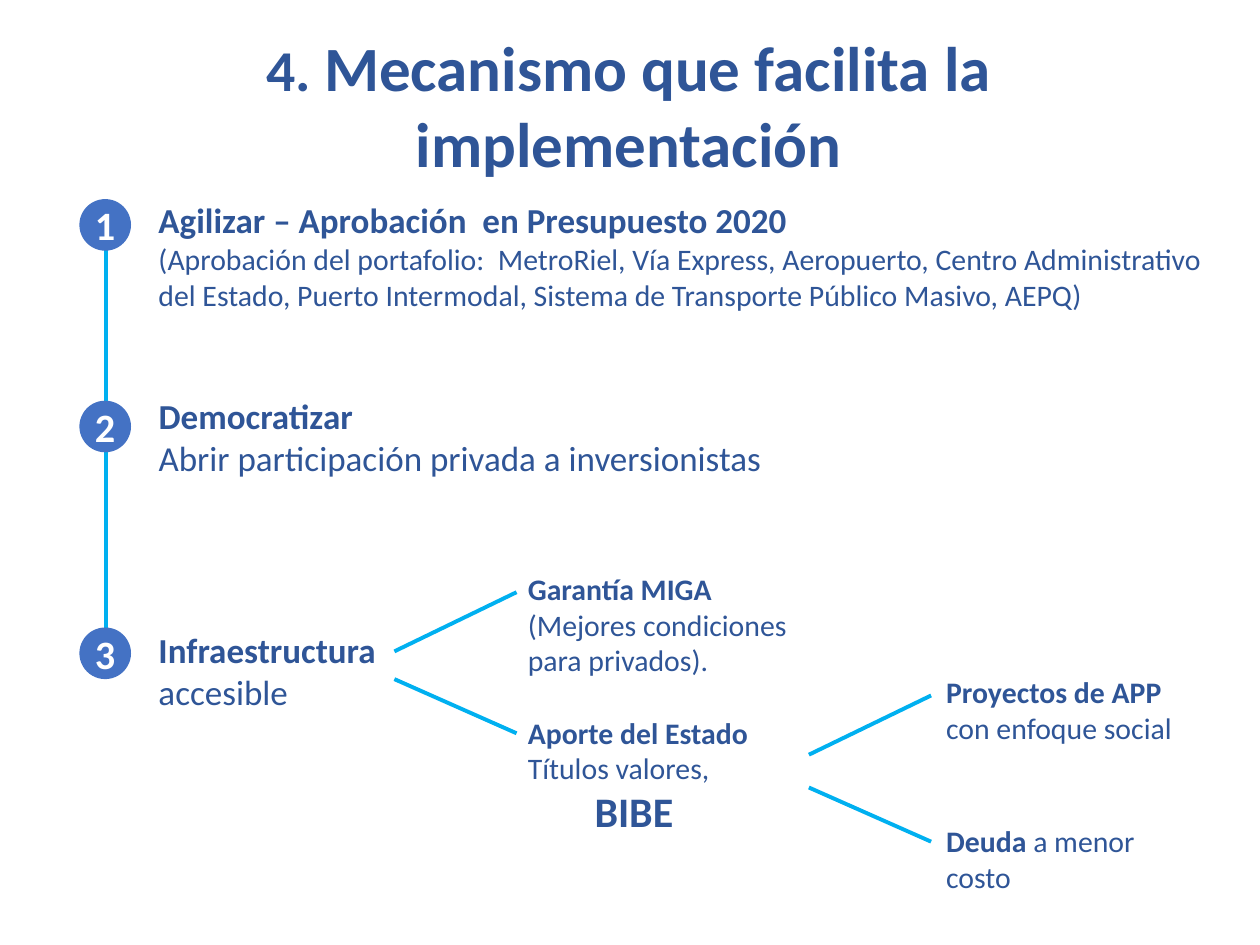
from pptx import Presentation
from pptx.dml.color import RGBColor
from pptx.enum.shapes import MSO_CONNECTOR, MSO_SHAPE
from pptx.enum.text import MSO_ANCHOR, PP_ALIGN
from pptx.oxml.ns import qn
from pptx.util import Inches, Pt
from lxml import etree

STRAIGHT = MSO_CONNECTOR.STRAIGHT
OVAL = MSO_SHAPE.OVAL
MIDDLE = MSO_ANCHOR.MIDDLE
CENTER = PP_ALIGN.CENTER
LEFT = PP_ALIGN.LEFT

COLORS = {"text": "2F5597", "badge": "4472C4", "line": "00B0F0", "number": "FFFFFF"}


def color(name):
    return RGBColor.from_string(COLORS[name])


class SlideBuilder:
    font_name = "Calibri"
    line_width = Pt(2.25)
    badge_size = 0.41

    def __init__(self, slide):
        self.slide = slide

    def span(self, para, text, size, bold, fill="text"):
        span = para.add_run()
        span.text = text
        formats = {"name": self.font_name, "size": Pt(size), "bold": bold}
        for name, value in formats.items():
            setattr(span.font, name, value)
        span.font.color.rgb = color(fill)

    def text(self, bounds, paragraphs, align=LEFT):
        box = self.slide.shapes.add_textbox(*map(Inches, bounds))
        frame = box.text_frame
        frame.word_wrap = True
        for index, spans in enumerate(paragraphs):
            para = frame.paragraphs[0] if index == 0 else frame.add_paragraph()
            para.alignment = align
            for text, size, bold in spans:
                self.span(para, text, size, bold)
        return frame

    def badge(self, left, top, label):
        size = Inches(self.badge_size)
        badge = self.slide.shapes.add_shape(OVAL, Inches(left), Inches(top), size, size)
        badge.shadow.inherit = False
        badge.fill.solid()
        badge.fill.fore_color.rgb = color("badge")
        badge.line.fill.background()
        frame = badge.text_frame
        formats = {
            "margin_left": 0, "margin_right": 0, "margin_top": 0, "margin_bottom": 0,
            "word_wrap": False, "vertical_anchor": MIDDLE,
        }
        for name, value in formats.items():
            setattr(frame, name, value)
        para = frame.paragraphs[0]
        para.alignment = CENTER
        self.span(para, label, 23, True, "number")

    def line(self, *ends):
        line = self.slide.shapes.add_connector(STRAIGHT, *map(Inches, ends))
        line.line.color.rgb = color("line")
        line.line.width = self.line_width
        etree.SubElement(line._element.spPr, qn("a:effectLst"))


def indent(para, distance):
    properties = para._p.get_or_add_pPr()
    properties.set("marL", str(Inches(distance)))
    properties.set("indent", "0")


def main():
    deck = Presentation()
    deck.slide_width = Inches(10)
    deck.slide_height = Inches(7.5)
    page = SlideBuilder(deck.slides.add_slide(deck.slide_layouts[6]))

    page.line(0.84, 1.72, 0.84, 5.17)
    page.text(
        (0.48, 0.18, 9.02, 1.87),
        [[("4. ", 33, True), ("Mecanismo que facilita la implementación", 36, True)]],
        CENTER,
    )
    for number, top in enumerate((1.58, 3.18, 4.98), start=1):
        page.badge(0.63, top, str(number))

    page.text((1.16, 1.53, 8.67, 1.01), [
        [("Agilizar – Aprobación  en Presupuesto 2020", 20, True)],
        [("(Aprobación del portafolio:  MetroRiel, Vía Express, Aeropuerto, "
          "Centro Administrativo del Estado, Puerto Intermodal, Sistema de "
          "Transporte Público Masivo, AEPQ)", 17, False)],
    ])
    page.text((1.16, 3.08, 5.01, 0.77), [
        [("Democratizar", 20, True)],
        [("Abrir participación privada a inversionistas", 20, False)],
    ])
    page.text((1.16, 4.94, 2.04, 0.77), [
        [("Infraestructura ", 20, True), ("accesible", 20, False)],
    ])
    page.text((4.09, 4.48, 2.59, 0.96), [
        [("Garantía MIGA", 17, True)],
        [("(Mejores condiciones para privados).", 17, False)],
    ])
    state = page.text((4.09, 5.62, 2.59, 1.08), [
        [("Aporte del Estado", 17, True)],
        [("Títulos valores,", 17, False)],
        [("BIBE", 24, True)],
    ])
    indent(state.paragraphs[-1], 0.53)
    page.text((7.41, 5.3, 2.21, 0.67), [
        [("Proyectos de APP ", 17, True), ("con enfoque social", 17, False)],
    ])
    page.text((7.41, 6.48, 2.31, 0.67), [
        [("Deuda", 17, True), (" a menor", 17, False)],
        [("costo", 17, False)],
    ])

    for left, upper, lower in ((3.13, 5.17, 5.39), (6.42, 5.99, 6.25)):
        page.line(left, upper, left + 0.97, upper - 0.47)
        page.line(left, lower, left + 0.97, lower + 0.43)

    deck.save("out.pptx")


if __name__ == "__main__":
    main()
